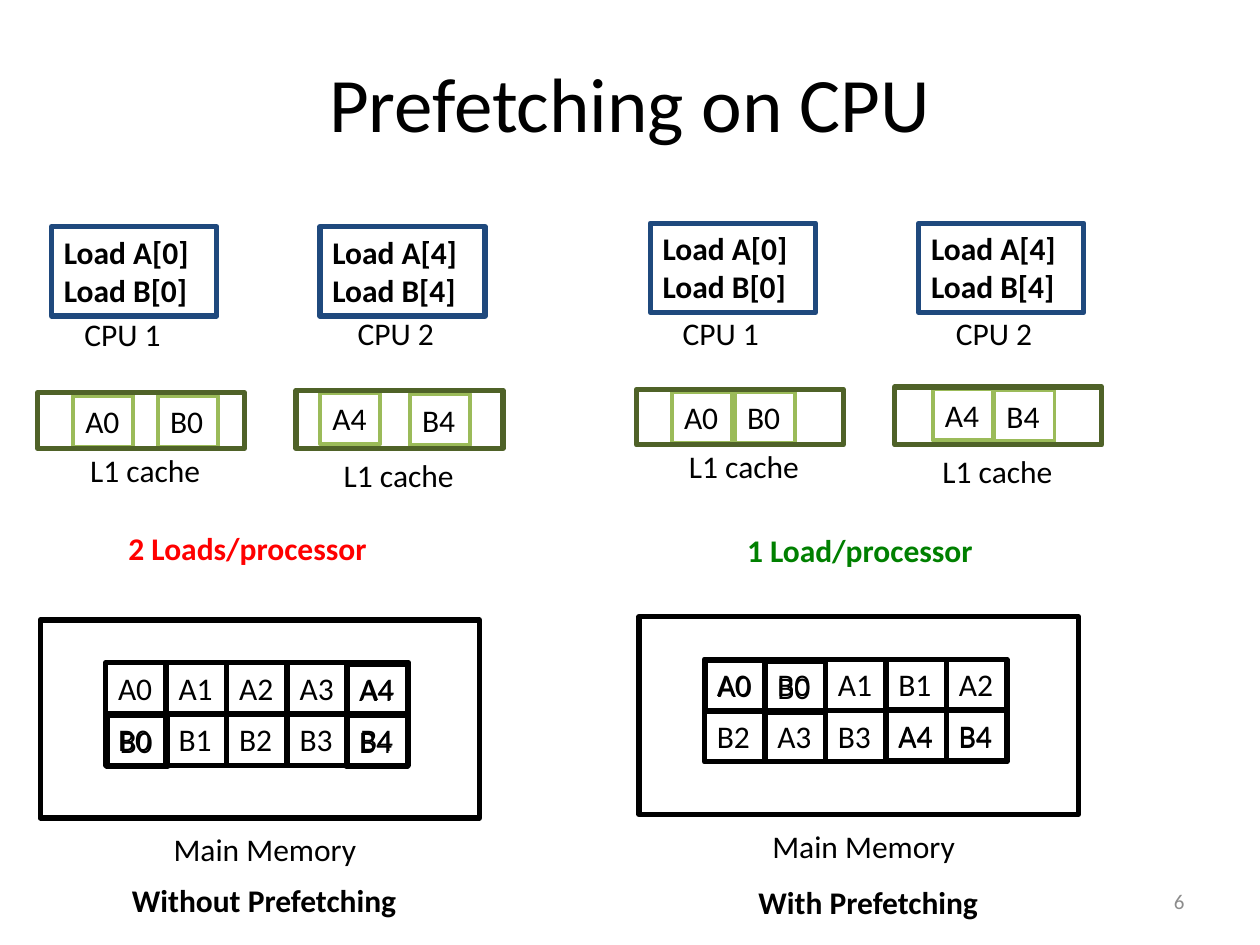
"""Build a slide comparing CPU memory loads without and with prefetching."""
from pptx import Presentation
from pptx import util as u
from pptx.dml import color
from pptx.enum import shapes, text

COLORS = {
    "black": "000000", "cpu": "1F497D", "cache": "4F6228", "line": "9BBB59",
    "slow": "FF0000", "fast": "008000", "number": "8C8C8C",
}
CELL_STEP, CELL_HEIGHT = 1.22, 1.03
CPU_STEP = 5.41

WITHOUT = {
    "left": 0, "top": 0,
    "cpu_labels": [(1.45, 6.22), (6.96, 6.2)],
    "cache_labels": [(1.57, 8.97), (6.68, 9.07)],
    "cached": [("A0", 1.47, 7.98), ("B0", 3.18, 7.98),
               ("A4", 6.45, 7.92), ("B4", 8.26, 7.95)],
    "memory": ["A0 A1 A2 A3 A4", "B0 B1 B2 B3 B4"],
    "fetched": [("B0", 2.16, 14.43), ("A4", 6.99, 13.39), ("B4", 6.99, 14.43)],
    "loads": ("2 Loads/processor", 2.34, 10.54, 5.38, "slow"),
    "caption": ("Without Prefetching", 2.41, 17.63, 5.97),
}
WITH = {
    "left": 12.07, "top": -0.07,
    "cpu_labels": [(13.51, 6.2), (19.02, 6.2)],
    "cache_labels": [(13.64, 8.89), (18.75, 8.99)],
    "cached": [("A0", 13.54, 7.9), ("B0", 14.81, 7.9),
               ("A4", 18.8, 7.85), ("B4", 20.04, 7.87)],
    "memory": ["A0 B0 A1 B1 A2", "B2 A3 B3 A4 B4"],
    "fetched": [("A0", 14.22, 13.31), ("B0", 15.42, 13.34),
                ("A4", 17.86, 14.3), ("B4", 19.08, 14.3)],
    "loads": ("1 Load/processor", 14.81, 10.59, 5.13, "fast"),
    "caption": ("With Prefetching", 15.04, 17.68, 5.03),
}


def rgb(name):
    """Return the named colour."""
    return color.RGBColor.from_string(COLORS[name])


def write(paragraph, words, size=18, ink="black", bold=False):
    """Add one formatted run to a paragraph."""
    run = paragraph.add_run()
    run.text = words
    run.font.name = "Calibri"
    run.font.size = u.Pt(size)
    run.font.bold = bold
    run.font.color.rgb = rgb(ink)


def add_label(slide, words, left, top, width, ink="black", bold=False):
    """Add a one-line text box."""
    box = slide.shapes.add_textbox(u.Cm(left), u.Cm(top), u.Cm(width), u.Cm(CELL_HEIGHT))
    frame = box.text_frame
    frame.word_wrap = False
    frame.auto_size = text.MSO_AUTO_SIZE.SHAPE_TO_FIT_TEXT
    write(frame.paragraphs[0], words, ink=ink, bold=bold)


def add_frame(slide, left, top, width, height, outline, weight=3):
    """Add an unfilled rectangle and return it."""
    shape = slide.shapes.add_shape(
        shapes.MSO_SHAPE.RECTANGLE, u.Cm(left), u.Cm(top), u.Cm(width), u.Cm(height))
    shape.shadow.inherit = False
    shape.fill.background()
    shape.line.color.rgb = rgb(outline)
    shape.line.width = u.Pt(weight)
    return shape


def fill_frame(shape, lines, bold=False, wrap=True):
    """Write left-aligned lines into a rectangle."""
    frame = shape.text_frame
    frame.word_wrap = wrap
    frame.auto_size = text.MSO_AUTO_SIZE.SHAPE_TO_FIT_TEXT
    frame.vertical_anchor = text.MSO_ANCHOR.TOP
    for index, line in enumerate(lines):
        paragraph = frame.add_paragraph() if index else frame.paragraphs[0]
        paragraph.alignment = text.PP_ALIGN.LEFT
        write(paragraph, line, bold=bold)


def add_cell(slide, words, left, top, outline="black", weight=3):
    """Add one data cell."""
    shape = add_frame(slide, left, top, CELL_STEP, CELL_HEIGHT, outline, weight)
    fill_frame(shape, [words], wrap=False)


def add_processors(slide, panel):
    """Add both processors with their caches."""
    left, top = panel["left"], panel["top"]
    for index, element in enumerate((0, 4)):
        shape = add_frame(slide, left + 1.04 + index * CPU_STEP, top + 4.57, 3.33, 1.8, "cpu")
        fill_frame(shape, [f"Load {array}[{element}]" for array in "AB"], bold=True)
        add_label(slide, f"CPU {index + 1}", *panel["cpu_labels"][index], 2.06)
        add_label(slide, "L1 cache", *panel["cache_labels"][index], 2.77)
    for words, cell_left, cell_top in panel["cached"]:
        add_cell(slide, words, cell_left, cell_top, "line", 2.25)
    add_frame(slide, left + 0.76, top + 7.92, 4.17, 1.12, "cache")
    add_frame(slide, left + 5.97, top + 7.87, 4.17, 1.17, "cache")


def add_memory(slide, panel):
    """Add main memory with its cells and the fetched ones on top."""
    left, top = panel["left"], panel["top"]
    for row, names in enumerate(panel["memory"]):
        for column, words in enumerate(names.split()):
            add_cell(slide, words, left + 2.13 + column * CELL_STEP, top + 13.36 + row * 1.04)
    for cell in panel["fetched"]:
        add_cell(slide, *cell)
    add_frame(slide, left + 0.81, top + 12.5, 8.86, 3.99, "black")
    add_label(slide, "Main Memory", left + 3.25, top + 16.61, 4.22)


def add_panel(slide, panel):
    """Add one half of the comparison."""
    add_processors(slide, panel)
    add_memory(slide, panel)
    add_label(slide, *panel["loads"], bold=True)
    add_label(slide, *panel["caption"], bold=True)


def add_title(slide, words):
    """Place and fill the title placeholder."""
    title = slide.shapes.title
    title.left, title.top = u.Cm(1.27), u.Cm(0.46)
    title.width, title.height = u.Cm(22.86), u.Cm(3.18)
    title.text_frame.vertical_anchor = text.MSO_ANCHOR.MIDDLE
    paragraph = title.text_frame.paragraphs[0]
    paragraph.alignment = text.PP_ALIGN.CENTER
    write(paragraph, words, size=44)


def add_number(slide, words):
    """Add the slide number."""
    box = slide.shapes.add_textbox(u.Cm(22.58), u.Cm(17.65), u.Cm(1.55), u.Cm(1.02))
    box.text_frame.word_wrap = True
    box.text_frame.vertical_anchor = text.MSO_ANCHOR.MIDDLE
    paragraph = box.text_frame.paragraphs[0]
    paragraph.alignment = text.PP_ALIGN.RIGHT
    write(paragraph, words, size=12, ink="number")


def main():
    """Create and save the presentation."""
    presentation = Presentation()
    presentation.slide_width, presentation.slide_height = u.Cm(25.4), u.Cm(19.05)
    slide = presentation.slides.add_slide(presentation.slide_layouts[5])
    add_title(slide, "Prefetching on CPU")
    add_number(slide, "6")
    for panel in (WITHOUT, WITH):
        add_panel(slide, panel)
    presentation.save("out.pptx")


if __name__ == "__main__":
    main()
